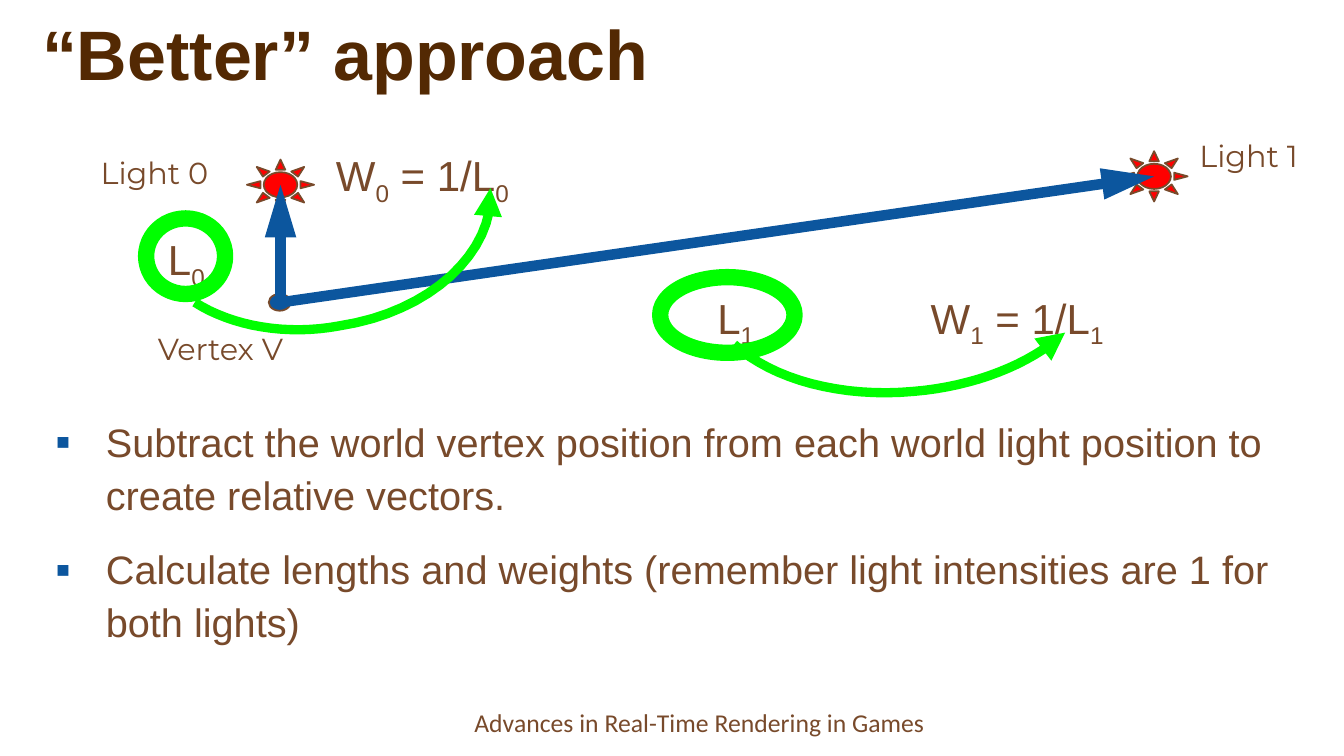
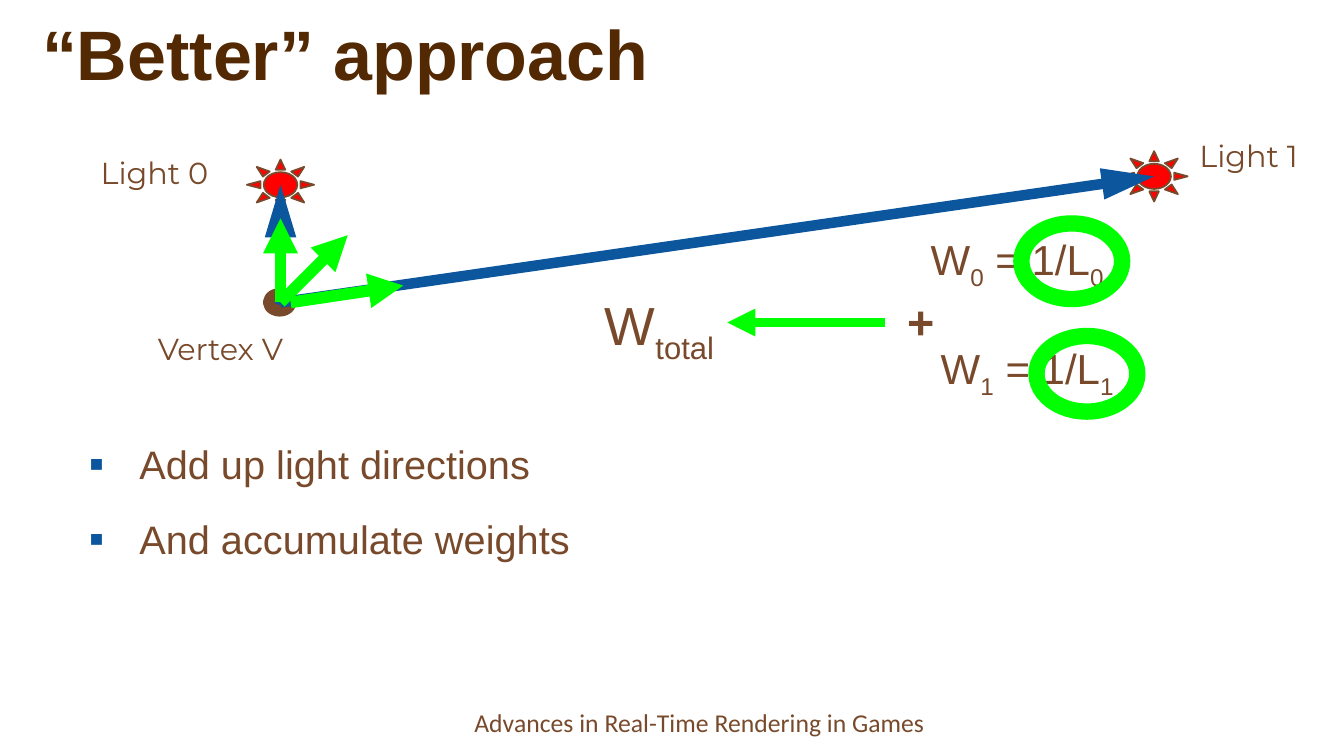
from lxml.etree import SubElement
from pptx import Presentation
from pptx.dml.color import RGBColor
from pptx.enum.shapes import MSO_CONNECTOR, MSO_SHAPE
from pptx.enum.text import MSO_ANCHOR, PP_ALIGN
from pptx.oxml import parse_xml
from pptx.oxml.ns import nsdecls, qn
from pptx.util import Inches, Pt

COLORS = {"title": "532903", "text": "784A2B", "blue": "0C569E",
          "light": "FF0000", "green": "00FF00"}
RGB = {name: RGBColor.from_string(value) for name, value in COLORS.items()}
VERTEX = (1.67, 1.8)
TITLE_SHADOW = (
    f'<a:effectLst {nsdecls("a")}><a:outerShdw blurRad="50800" dist="38100" dir="2700000">'
    f'<a:srgbClr val="{COLORS["title"]}"><a:alpha val="60000"/></a:srgbClr>'
    '</a:outerShdw></a:effectLst>')


def add_text(slide, box, paragraphs, size, font="Arial", color="text", bold=False, inset=0.07):
    """Add a text box; each paragraph is a string whose odd "_" parts are subscripts."""
    frame = slide.shapes.add_textbox(*map(Inches, box)).text_frame
    frame.word_wrap = True
    frame.margin_left = frame.margin_right = Inches(inset)
    frame.margin_top = frame.margin_bottom = Inches(0.04)
    for number, content in enumerate(paragraphs):
        paragraph = frame.add_paragraph() if number else frame.paragraphs[0]
        for part, piece in enumerate(content.split("_")):
            run = paragraph.add_run()
            run.text = piece
            run.font.size, run.font.name, run.font.bold = Pt(size), font, bold
            run.font.color.rgb = RGB[color]
            if part % 2:
                run.font._element.set("baseline", "-25000")
    return frame


def finish_stroke(stroke, color, width, head_length="med"):
    """Style an arrow and give its far end a triangular head."""
    stroke.line.color.rgb = RGB[color]
    stroke.line.width = Pt(width)
    properties = stroke._element.spPr
    SubElement(stroke.line._get_or_add_ln(), qn("a:tailEnd"),
               type="triangle", w="med", len=head_length)
    if properties.find(qn("a:effectLst")) is None:
        SubElement(properties, qn("a:effectLst"))


# Each step adds its own weights, rings and arrows to the shared light diagram.
steps = [
    {
        "vertex_outline": 0.75,
        "bullets_box": (0.25, 2.42, 7.48, 1.48),
        "bullets": ["Subtract the world vertex position from each world light position "
                    "to create relative vectors.",
                    "Calculate lengths and weights (remember light intensities are 1 "
                    "for both lights)"],
        "formulas": [("L_0", 0.93, 1.35, 0.47, 18), ("L_1", 4.2, 1.7, 0.47, 18),
                     ("W_0_ = 1/L_0", 1.93, 0.85, 1.87, 18),
                     ("W_1_ = 1/L_1", 5.47, 1.7, 1.87, 18)],
        "rings": [(0.87, 1.3, 0.47, 0.45), (3.93, 1.65, 0.8, 0.45)],
        "arrows": [],
        "curves": [
            [(1.16, 1.8), (1.38, 1.94), (1.7, 2), (2.02, 1.94),
             (2.56, 1.86), (2.95, 1.5), (2.92, 1.12)],
            [(4.37, 2.05), (4.6, 2.26), (5.01, 2.37), (5.44, 2.33),
             (5.8, 2.3), (6.13, 2.17), (6.34, 1.98)],
        ],
    },
    {
        "vertex_outline": 5,
        "bullets_box": (0.45, 2.55, 5.56, 1.65),
        "bullets": ["Add up light directions", "And accumulate weights"],
        "formulas": [("W_0_ = 1/L_0", 5.47, 1.35, 1.87, 18),
                     ("W_1_ = 1/L_1", 5.53, 2, 1.87, 18),
                     ("+", 5.33, 1.7, 0.67, 20), ("W_total", 3.53, 1.7, 1, 23)],
        "rings": [(6.08, 1.33, 0.6, 0.45), (6.17, 2, 0.6, 0.45)],
        "arrows": [(VERTEX, (1.67, 1.3), 5), ((1.73, 1.8), (2.4, 1.7), 5),
                   (VERTEX, (2.07, 1.4), 5), ((5.27, 1.92), (4.33, 1.92), 4)],
        "curves": [],
    },
]

presentation = Presentation()
presentation.slide_width, presentation.slide_height = Inches(8), Inches(4.5)

for step in steps:
    slide = presentation.slides.add_slide(presentation.slide_layouts[6])

    footer = add_text(slide, (1.25, 4.17, 5.83, 0.29),
                      ["Advances in Real-Time Rendering in Games"], 11, "Calibri")
    footer.paragraphs[0].alignment = PP_ALIGN.CENTER

    title = add_text(slide, (0.17, 0, 7.35, 0.63), ["“Better” approach"], 30,
                     color="title", bold=True, inset=0.08)
    title.vertical_anchor = MSO_ANCHOR.MIDDLE
    title_font = title.paragraphs[0].runs[0].font._element
    title_font.find(qn("a:solidFill")).addnext(parse_xml(TITLE_SHADOW))

    bullets = add_text(slide, step["bullets_box"], step["bullets"], 17, inset=0.08)
    for number, bullet in enumerate(bullets.paragraphs):
        bullet.line_spacing = 1.1
        bullet.space_after = Pt(4.8)
        if number:
            bullet.space_before = Pt(4.8)
        indents = bullet._p.get_or_add_pPr()
        indents.set("marL", str(Inches(0.3)))
        indents.set("indent", str(-Inches(0.3)))
        marker_color = SubElement(indents, qn("a:buClr"))
        SubElement(marker_color, qn("a:srgbClr"), val=COLORS["blue"])
        SubElement(indents, qn("a:buSzPct"), val="110000")
        SubElement(indents, qn("a:buFont"), typeface="Arial")
        SubElement(indents, qn("a:buChar"), char="▪")

    # The vertex and the two lights
    for preset, box, fill, outline in [
        (MSO_SHAPE.OVAL, (1.6, 1.75, 0.13, 0.1), "blue", step["vertex_outline"]),
        (MSO_SHAPE.SUN, (1.47, 0.95, 0.4, 0.3), "light", 0.75),
        (MSO_SHAPE.SUN, (6.67, 0.9, 0.4, 0.3), "light", 0.75),
    ]:
        body = slide.shapes.add_shape(preset, *map(Inches, box))
        body.shadow.inherit = False
        body.fill.solid()
        body.fill.fore_color.rgb = RGB[fill]
        body.line.color.rgb = RGB["text"]
        body.line.width = Pt(outline)

    for name, left, top, width in [("Light 0", 0.53, 0.9, 1.07),
                                   ("Vertex V", 0.87, 1.95, 1.2),
                                   ("Light 1", 7.07, 0.8, 1.07)]:
        label = add_text(slide, (left, top, width, 0.27), [name], 13, "Montserrat")
        label.paragraphs[0].line_spacing = 0.9

    for formula, left, top, width, size in step["formulas"]:
        add_text(slide, (left, top, width, size * 0.02 + 0.02), [formula], size,
                 bold=formula == "+")

    light_rays = [(VERTEX, (1.67, 1.1), 4.5), (VERTEX, (6.87, 1.05), 4.5)]
    for color, head_length, arrows in [("blue", "lg", light_rays),
                                       ("green", "med", step["arrows"])]:
        for start, end, width in arrows:
            arrow = slide.shapes.add_connector(MSO_CONNECTOR.STRAIGHT,
                                               *map(Inches, start + end))
            finish_stroke(arrow, color, width, head_length)

    for box in step["rings"]:
        ring = slide.shapes.add_shape(MSO_SHAPE.OVAL, *map(Inches, box))
        ring.shadow.inherit = False
        ring.fill.background()
        ring.line.color.rgb = RGB["green"]
        ring.line.width = Pt(7)

    # Each curve is two cubic Bézier pieces, sampled evenly
    for controls in step["curves"]:
        points = []
        for first in (0, 3):
            for t in [i / 16 for i in range(1, 17)]:
                weights = ((1 - t) ** 3, 3 * t * (1 - t) ** 2, 3 * t ** 2 * (1 - t), t ** 3)
                points.append([sum(w * point[axis] for w, point
                                   in zip(weights, controls[first:first + 4]))
                               for axis in (0, 1)])
        outline = slide.shapes.build_freeform(*controls[0], scale=Inches(1))
        outline.add_line_segments(points, close=False)
        # A fine local grid keeps the sampled points smooth
        outline = slide.shapes.build_freeform(*map(Inches, controls[0]))
        outline.add_line_segments([tuple(map(Inches, point)) for point in points], close=False)
        curve = outline.convert_to_shape()
        curve.fill.background()
        finish_stroke(curve, "green", 4)

presentation.save("out.pptx")
